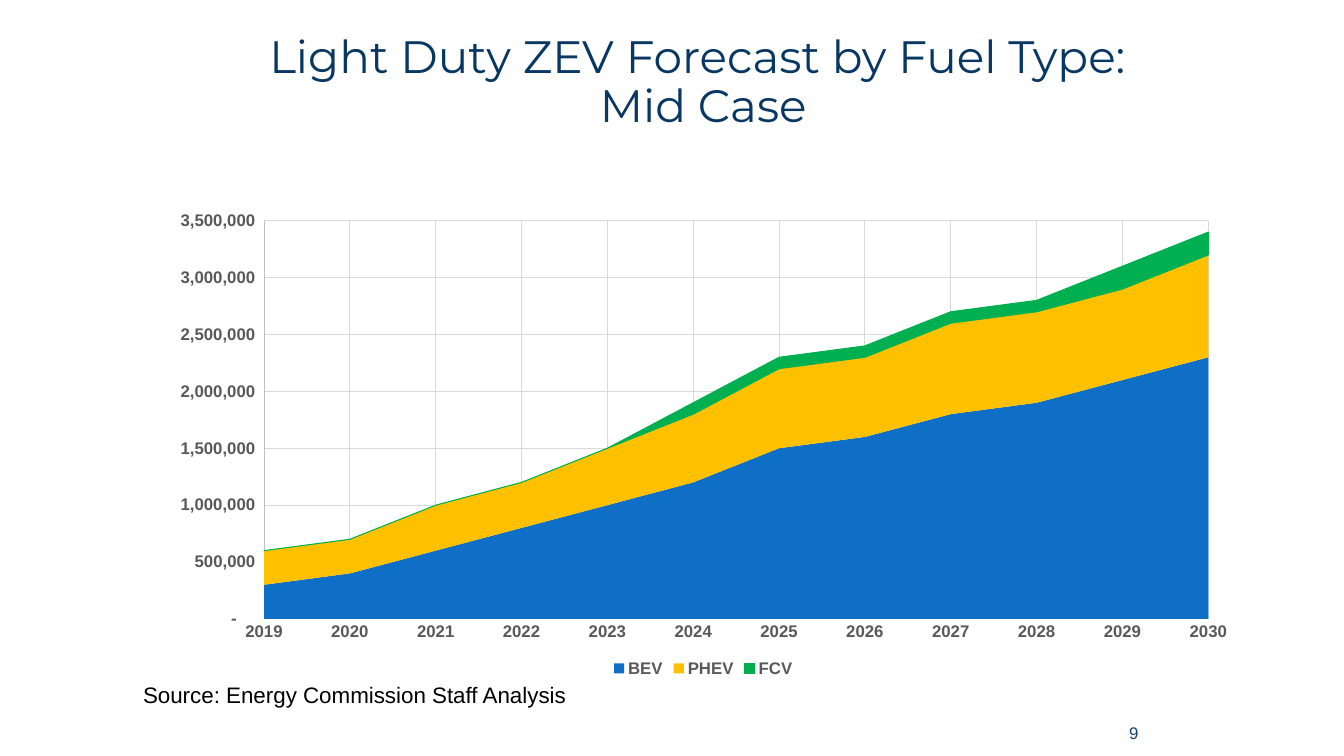
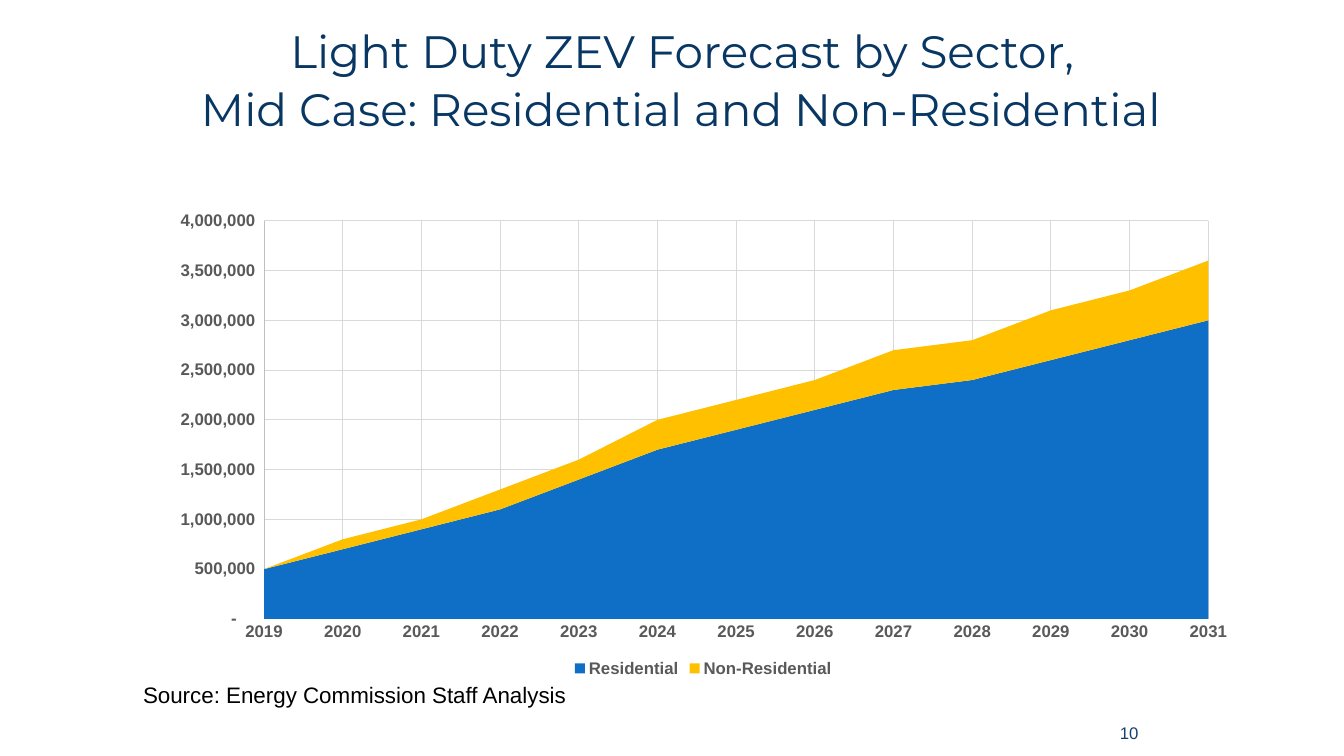
from dataclasses import dataclass

from lxml import etree
from pptx import Presentation
from pptx.chart.chart import Chart
from pptx.chart.data import CategoryChartData
from pptx.dml.color import RGBColor
from pptx.enum.chart import XL_CHART_TYPE, XL_LEGEND_POSITION, XL_TICK_MARK
from pptx.enum.text import MSO_ANCHOR, MSO_AUTO_SIZE, PP_ALIGN
from pptx.oxml.ns import qn
from pptx.slide import Slide
from pptx.util import Inches, Pt

AREA_STACKED = XL_CHART_TYPE.AREA_STACKED
BOTTOM = XL_LEGEND_POSITION.BOTTOM
NO_TICK = XL_TICK_MARK.NONE
MIDDLE, TOP = MSO_ANCHOR.MIDDLE, MSO_ANCHOR.TOP
NO_AUTOFIT = MSO_AUTO_SIZE.NONE
LEFT, CENTER, RIGHT = PP_ALIGN.LEFT, PP_ALIGN.CENTER, PP_ALIGN.RIGHT

TITLE_FONT, BODY_FONT = "Montserrat", "Arial"
NAVY, NUMBER_BLUE, BLACK = "083763", "17406D", "000000"
LABEL_GREY, AXIS_GREY, GRID_GREY = "595959", "BFBFBF", "D9D9D9"
BLUE, AMBER, GREEN = "0F6FC6", "FFC000", "00B050"

FIRST_YEAR = 2019
VALUE_UNIT = 100_000
AXIS_FORMAT = '_(* #,##0_);_(* \\(#,##0\\);_(* "-"??_);_('
PLOT_AREA = {"x": 0.1, "y": 0.04, "w": 0.86, "h": 0.83}
SOURCE = "Source: Energy Commission Staff Analysis"


@dataclass(frozen=True)
class Series:
    """One stacked area; values count units of VALUE_UNIT vehicles."""
    name: str
    color: str
    values: tuple[int, ...]
    outlined: bool = False


@dataclass(frozen=True)
class Forecast:
    number: int
    title: str
    title_width: float
    axis_max: int
    series: tuple[Series, ...]
    end_space_size: float | None = None


FORECASTS = (
    Forecast(
        9, "Light Duty ZEV Forecast by Fuel Type: \vMid Case", 10.89, 3_500_000,
        (
            Series("BEV", BLUE, (3, 4, 6, 8, 10, 12, 15, 16, 18, 19, 21, 23)),
            Series("PHEV", AMBER, (3, 3, 4, 4, 5, 6, 7, 7, 8, 8, 8, 9)),
            Series("FCV", GREEN, (0, 0, 0, 0, 0, 1, 1, 1, 1, 1, 2, 2),
                   outlined=True),
        ),
    ),
    Forecast(
        10,
        "Light Duty ZEV Forecast by Sector, \v"
        "Mid Case: Residential and Non-Residential",
        10.59, 4_000_000,
        (
            Series("Residential", BLUE,
                   (5, 7, 9, 11, 14, 17, 19, 21, 23, 24, 26, 28, 30)),
            Series("Non-Residential", AMBER,
                   (0, 1, 1, 2, 2, 3, 3, 3, 4, 4, 5, 5, 6)),
        ),
        end_space_size=39.6,
    ),
)


def rgb(color: str) -> RGBColor:
    return RGBColor.from_string(color)


def style_font(font, size: float, color: str, name: str = BODY_FONT,
               bold: bool = False) -> None:
    font.name, font.size, font.bold = name, Pt(size), bold
    font.color.rgb = rgb(color)


def style_line(line, color: str) -> None:
    line.color.rgb = rgb(color)
    line.width = Pt(0.75)


def set_title(s: Slide, forecast: Forecast) -> None:
    sp = s.shapes.title
    sp.left, sp.top = Inches(1.53), Inches(0.26)
    sp.width, sp.height = Inches(forecast.title_width), Inches(1.14)
    tf = sp.text_frame
    tf.auto_size, tf.vertical_anchor = NO_AUTOFIT, MIDDLE
    p = tf.paragraphs[0]
    p.text = forecast.title
    p.alignment, p.line_spacing = CENTER, 0.9
    style_font(p.font, 32.4, NAVY, TITLE_FONT)
    if forecast.end_space_size:
        r = p.add_run()
        r.text = " "
        r.font.size = Pt(forecast.end_space_size)


def add_text(s: Slide, text: str, box: tuple[float, float, float, float],
             size: float, color: str, align=LEFT, anchor=TOP) -> None:
    tf = s.shapes.add_textbox(*map(Inches, box)).text_frame
    tf.word_wrap, tf.vertical_anchor = True, anchor
    p = tf.paragraphs[0]
    p.text, p.alignment = text, align
    style_font(p.font, size, color)


def fix_plot_area(chart: Chart) -> None:
    """Pin the inner plot area and start the areas on the value axis."""
    plot_area = chart.element.find(".//" + qn("c:plotArea"))
    for old in plot_area.findall(qn("c:layout")):
        plot_area.remove(old)
    layout = etree.Element(qn("c:layout"))
    manual = etree.SubElement(layout, qn("c:manualLayout"))
    settings = {"layoutTarget": "inner", "xMode": "edge", "yMode": "edge",
                **PLOT_AREA}
    for tag, value in settings.items():
        etree.SubElement(manual, qn(f"c:{tag}")).set("val", str(value))
    plot_area.insert(0, layout)
    for cross in plot_area.iter(qn("c:crossBetween")):
        cross.set("val", "midCat")


def add_area_chart(s: Slide, forecast: Forecast) -> None:
    data = CategoryChartData()
    years = len(forecast.series[0].values)
    data.categories = [str(FIRST_YEAR + i) for i in range(years)]
    for series in forecast.series:
        data.add_series(series.name, [v * VALUE_UNIT for v in series.values])
    box = map(Inches, (1.53, 2, 10.89, 4.76))
    chart = s.shapes.add_chart(AREA_STACKED, *box, data).chart
    style_font(chart.font, 10, BLACK)
    chart.has_title = False
    chart.has_legend = True
    chart.legend.position = BOTTOM
    chart.legend.include_in_layout = False
    style_font(chart.legend.font, 12, LABEL_GREY, bold=True)

    for axis in (chart.category_axis, chart.value_axis):
        axis.major_tick_mark = axis.minor_tick_mark = NO_TICK
        axis.has_major_gridlines = True
        style_line(axis.major_gridlines.format.line, GRID_GREY)
        style_line(axis.format.line, AXIS_GREY)
        style_font(axis.tick_labels.font, 12, LABEL_GREY, bold=True)
    value_axis = chart.value_axis
    value_axis.minimum_scale, value_axis.maximum_scale = 0, forecast.axis_max
    value_axis.major_unit = 500_000
    value_axis.tick_labels.number_format = AXIS_FORMAT
    value_axis.tick_labels.number_format_is_linked = False

    plot = chart.plots[0]
    plot.vary_by_categories = False
    for area, series in zip(plot.series, forecast.series):
        area.format.fill.solid()
        area.format.fill.fore_color.rgb = rgb(series.color)
        if series.outlined:
            style_line(area.format.line, series.color)
        else:
            area.format.line.fill.background()
    fix_plot_area(chart)


def main() -> None:
    prs = Presentation()
    prs.slide_width, prs.slide_height = Inches(13.33), Inches(7.5)
    title_only = prs.slide_layouts.get_by_name("Title Only")
    for forecast in FORECASTS:
        s = prs.slides.add_slide(title_only)
        set_title(s, forecast)
        add_text(s, str(forecast.number), (9.42, 7.07, 1.97, 0.4), 12,
                 NUMBER_BLUE, RIGHT, MIDDLE)
        add_area_chart(s, forecast)
        add_text(s, SOURCE, (1.32, 6.71, 4.42, 0.37), 16, BLACK)
    prs.save("out.pptx")


if __name__ == "__main__":
    main()
